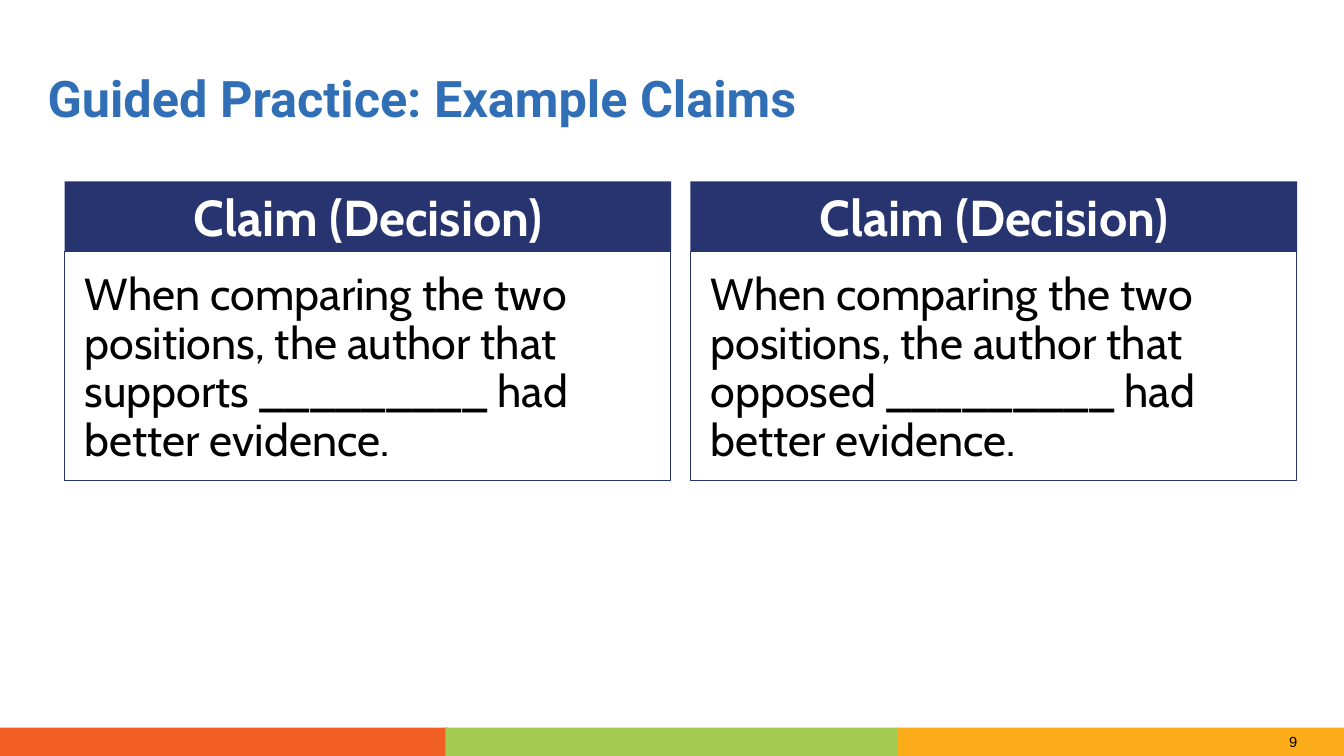
from dataclasses import dataclass

from pptx import Presentation
from pptx.dml.color import RGBColor
from pptx.enum.shapes import MSO_SHAPE
from pptx.enum.text import MSO_ANCHOR, PP_ALIGN
from pptx.util import Pt

RECTANGLE = MSO_SHAPE.RECTANGLE
TOP, MIDDLE, BOTTOM = MSO_ANCHOR.TOP, MSO_ANCHOR.MIDDLE, MSO_ANCHOR.BOTTOM
LEFT, CENTER = PP_ALIGN.LEFT, PP_ALIGN.CENTER


@dataclass(frozen=True)
class TextStyle:
    font: str
    size: float
    color: str
    bold: bool = False
    align: PP_ALIGN = LEFT
    anchor: MSO_ANCHOR = TOP
    inset: tuple = (7.2, 3.6)
    line_spacing: float = 0.9


@dataclass(frozen=True)
class Theme:
    navy: str = "27346F"
    orange: str = "F15F22"
    green: str = "A2CB4F"
    yellow: str = "FBAC18"
    title: TextStyle = TextStyle("Roboto", 36, "306EB6", bold=True, anchor=MIDDLE, inset=(0, 0))
    heading: TextStyle = TextStyle("Cabin", 36, "FFFFFF", bold=True, align=CENTER, anchor=BOTTOM)
    body: TextStyle = TextStyle("Cabin", 32, "000000", inset=(14.4, 14.4))
    page_number: TextStyle = TextStyle("Arial", 10.5, "000000", line_spacing=1.0)


class SlideBuilder:
    def __init__(self, slide, theme):
        self.slide = slide
        self.theme = theme

    def fill_text(self, shape, text, style):
        frame = shape.text_frame
        frame.word_wrap = True
        frame.vertical_anchor = style.anchor
        frame.margin_left = frame.margin_right = Pt(style.inset[0])
        frame.margin_top = frame.margin_bottom = Pt(style.inset[1])
        paragraph = frame.paragraphs[0]
        paragraph.text = text
        paragraph.alignment = style.align
        paragraph.line_spacing = style.line_spacing
        font = paragraph.font
        font.name = style.font
        font.size = Pt(style.size)
        font.bold = style.bold
        font.color.rgb = RGBColor.from_string(style.color)

    def text_box(self, left, top, width, height, text, style):
        box = self.slide.shapes.add_textbox(Pt(left), Pt(top), Pt(width), Pt(height))
        self.fill_text(box, text, style)

    def rectangle(self, left, top, width, height, fill=None, line=None):
        shape = self.slide.shapes.add_shape(RECTANGLE, Pt(left), Pt(top), Pt(width), Pt(height))
        shape.shadow.inherit = False
        if fill:
            shape.fill.solid()
            shape.fill.fore_color.rgb = RGBColor.from_string(fill)
        else:
            shape.fill.background()
        if line:
            shape.line.color.rgb = RGBColor.from_string(line)
            shape.line.width = Pt(0.75)
        else:
            shape.line.fill.background()
        return shape

    def claim_card(self, left, top, heading, body):
        theme = self.theme
        heading_height = 50.4
        header = self.rectangle(left, top, 433.4, heading_height, fill=theme.navy)
        self.fill_text(header, heading, theme.heading)
        panel = self.rectangle(left, top + heading_height, 432.7, 163.4, line=theme.navy)
        self.fill_text(panel, body, theme.body)

    def footer(self, number):
        theme = self.theme
        top, height = 519.8, 20.2
        bands = ((640, 320, theme.yellow), (0, 320, theme.orange), (318.2, 322.4, theme.green))
        for left, width, color in bands:
            self.rectangle(left, top, width, height, fill=color)
        self.text_box(913.7, top, 27.4, height, number, theme.page_number)


def main():
    presentation = Presentation()
    presentation.slide_width, presentation.slide_height = Pt(960), Pt(540)
    slide = presentation.slides.add_slide(presentation.slide_layouts[6])
    builder = SlideBuilder(slide, Theme())

    builder.footer("9")
    builder.text_box(34, 55.4, 892.8, 33.8, "Guided Practice: Example Claims", builder.theme.title)
    for column, verb in enumerate(("supports", "opposed")):
        builder.claim_card(
            46.1 + column * 447.1, 129.6, "Claim (Decision)",
            f"When comparing the two positions, the author that {verb} _________ had better evidence.",
        )
    presentation.save("out.pptx")


if __name__ == "__main__":
    main()
